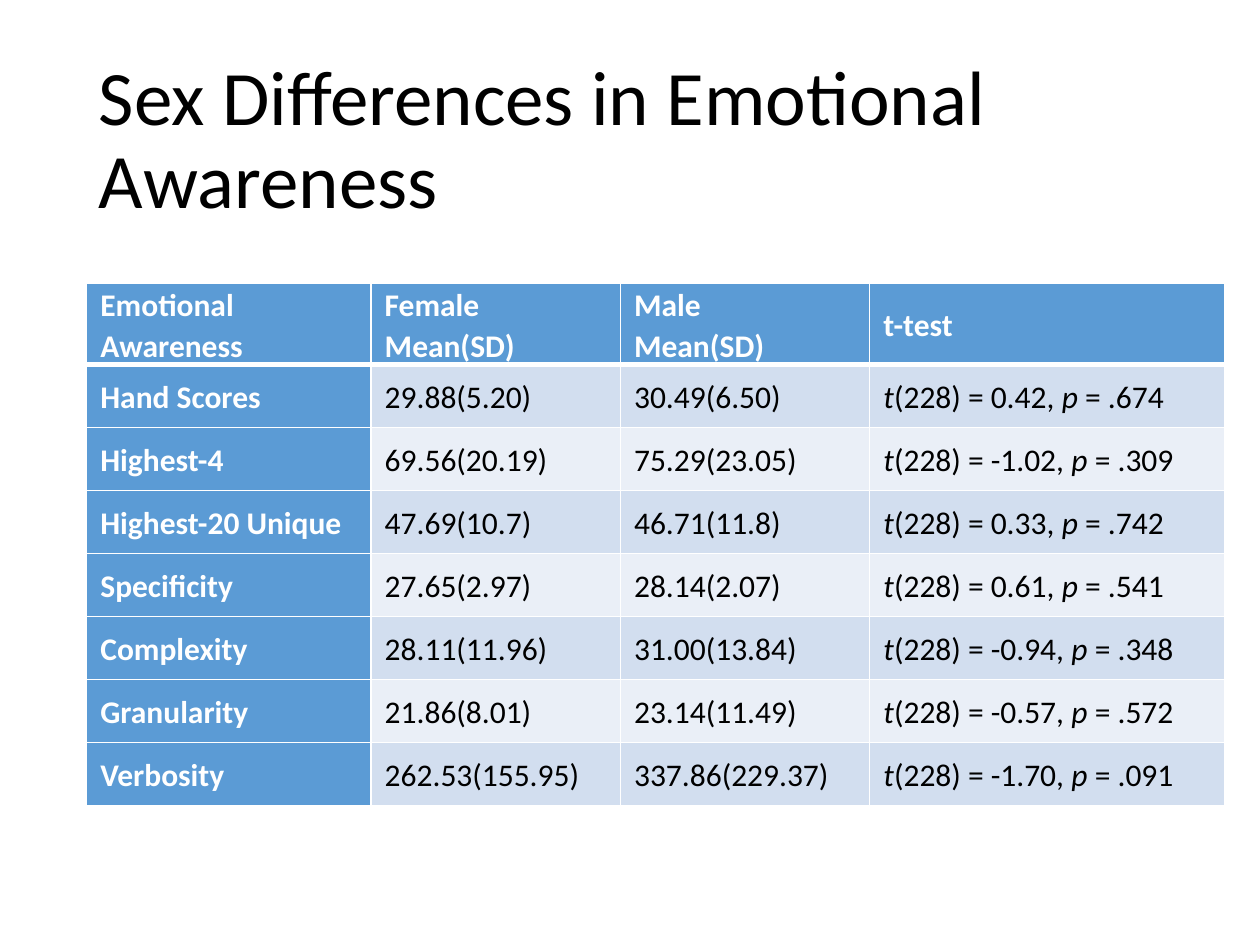
from lxml import etree
from pptx import Presentation
from pptx.dml.color import RGBColor
from pptx.enum import text
from pptx.oxml import ns
from pptx.util import Pt

COLORS = {"header": "5B9BD5", "odd": "D2DEEF", "even": "EAEFF7", "white": "FFFFFF", "black": "000000"}
HEADERS = [["Emotional Awareness"], ["Female", "Mean(SD)"], ["Male", "Mean(SD)"], ["t-test"]]
MEASURES = [
    ("Hand Scores", "29.88(5.20)", "30.49(6.50)", "0.42", ".674"),
    ("Highest-4", "69.56(20.19)", "75.29(23.05)", "-1.02", ".309"),
    ("Highest-20 Unique", "47.69(10.7)", "46.71(11.8)", "0.33", ".742"),
    ("Specificity", "27.65(2.97)", "28.14(2.07)", "0.61", ".541"),
    ("Complexity", "28.11(11.96)", "31.00(13.84)", "-0.94", ".348"),
    ("Granularity", "21.86(8.01)", "23.14(11.49)", "-0.57", ".572"),
    ("Verbosity", "262.53(155.95)", "337.86(229.37)", "-1.70", ".091"),
]
COLUMN_WIDTHS = [162.5, 142.5, 142.5, 202.7]
ROW_HEIGHT = 36
CELL_FORMAT = {
    "margin_left": Pt(7.9), "margin_right": Pt(7.9), "margin_top": 0, "margin_bottom": 0,
    "vertical_anchor": text.MSO_ANCHOR.MIDDLE,
}


def apply_format(target, values):
    for name, value in values.items():
        setattr(target, name, value)


def write_paragraphs(frame, paragraphs, size, color, spacing, bold=False):
    for index, runs in enumerate(paragraphs):
        paragraph = frame.add_paragraph() if index else frame.paragraphs[0]
        apply_format(paragraph, {
            "line_spacing": spacing, "alignment": text.PP_ALIGN.LEFT,
            "space_before": Pt(0), "space_after": Pt(0),
        })
        for words, italic in runs:
            run = paragraph.add_run()
            run.text = words
            apply_format(run.font, {"name": "Calibri", "size": Pt(size), "bold": bold, "italic": italic})
            run.font.color.rgb = RGBColor.from_string(COLORS[color])


def set_borders(cell, widths):
    properties = cell._tc.get_or_add_tcPr()
    for side, width in widths.items():
        line = etree.SubElement(properties, ns.qn(f"a:ln{side}"), w=str(Pt(width)))
        fill = etree.SubElement(line, ns.qn("a:solidFill"))
        etree.SubElement(fill, ns.qn("a:srgbClr"), val=COLORS["white"])


def add_title(slide, left, top, width, height):
    shape = slide.shapes.add_textbox(Pt(left), Pt(top), Pt(width), Pt(height))
    apply_format(shape.text_frame, {"word_wrap": True, "vertical_anchor": text.MSO_ANCHOR.MIDDLE})
    title = [[("Sex Differences in Emotional Awareness", False)]]
    write_paragraphs(shape.text_frame, title, 44, "black", 0.9)


def measure_cells(name, female, male, statistic, probability):
    result = [("t", True), (f"(228) = {statistic}, ", False), ("p ", True), (f"= {probability}", False)]
    return [[[(words, False)]] for words in (name, female, male)] + [[result]]


def add_results_table(slide, left, top):
    headers = [[[(line, False)] for line in lines] for lines in HEADERS]
    rows = [headers] + [measure_cells(*measure) for measure in MEASURES]
    table = slide.shapes.add_table(
        len(rows), len(COLUMN_WIDTHS), Pt(left), Pt(top),
        Pt(sum(COLUMN_WIDTHS)), Pt(ROW_HEIGHT * len(rows)),
    ).table
    table.first_col = True
    for column, width in zip(table.columns, COLUMN_WIDTHS):
        column.width = Pt(width)
    for row_index, row in enumerate(rows):
        table.rows[row_index].height = Pt(ROW_HEIGHT)
        band = "odd" if row_index % 2 else "even"
        for column_index, paragraphs in enumerate(row):
            cell = table.cell(row_index, column_index)
            heading = row_index == 0 or column_index == 0
            apply_format(cell, CELL_FORMAT)
            set_borders(cell, {
                "L": 1, "R": 1, "T": 3 if row_index == 1 else 1, "B": 3 if row_index == 0 else 1,
            })
            cell.fill.solid()
            cell.fill.fore_color.rgb = RGBColor.from_string(COLORS["header" if heading else band])
            write_paragraphs(cell.text_frame, paragraphs, 18, "white" if heading else "black", 1.07, heading)


def main():
    presentation = Presentation()
    apply_format(presentation, {"slide_width": Pt(720), "slide_height": Pt(540)})
    slide = presentation.slides.add_slide(presentation.slide_layouts[6])
    add_title(slide, 49.5, 28.75, 621, 104.4)
    add_results_table(slide, 49.5, 162)
    presentation.save("out.pptx")


if __name__ == "__main__":
    main()
